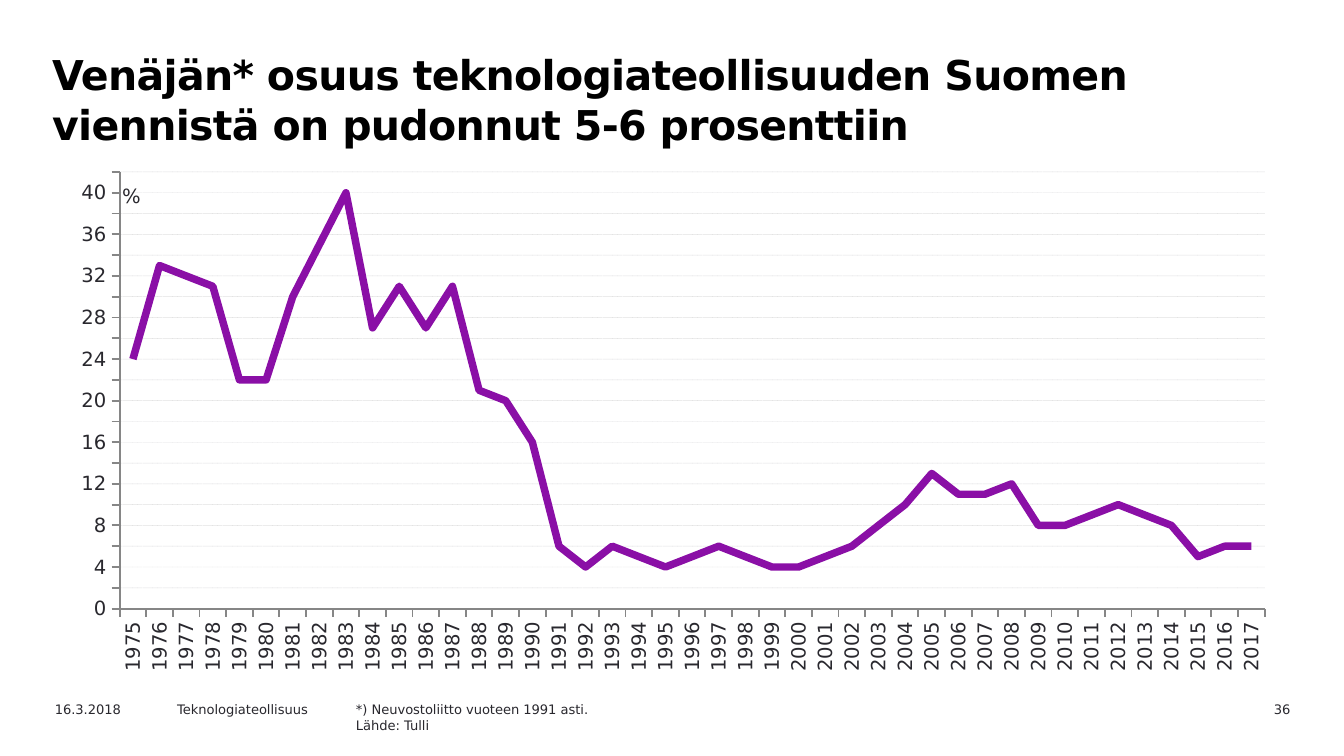
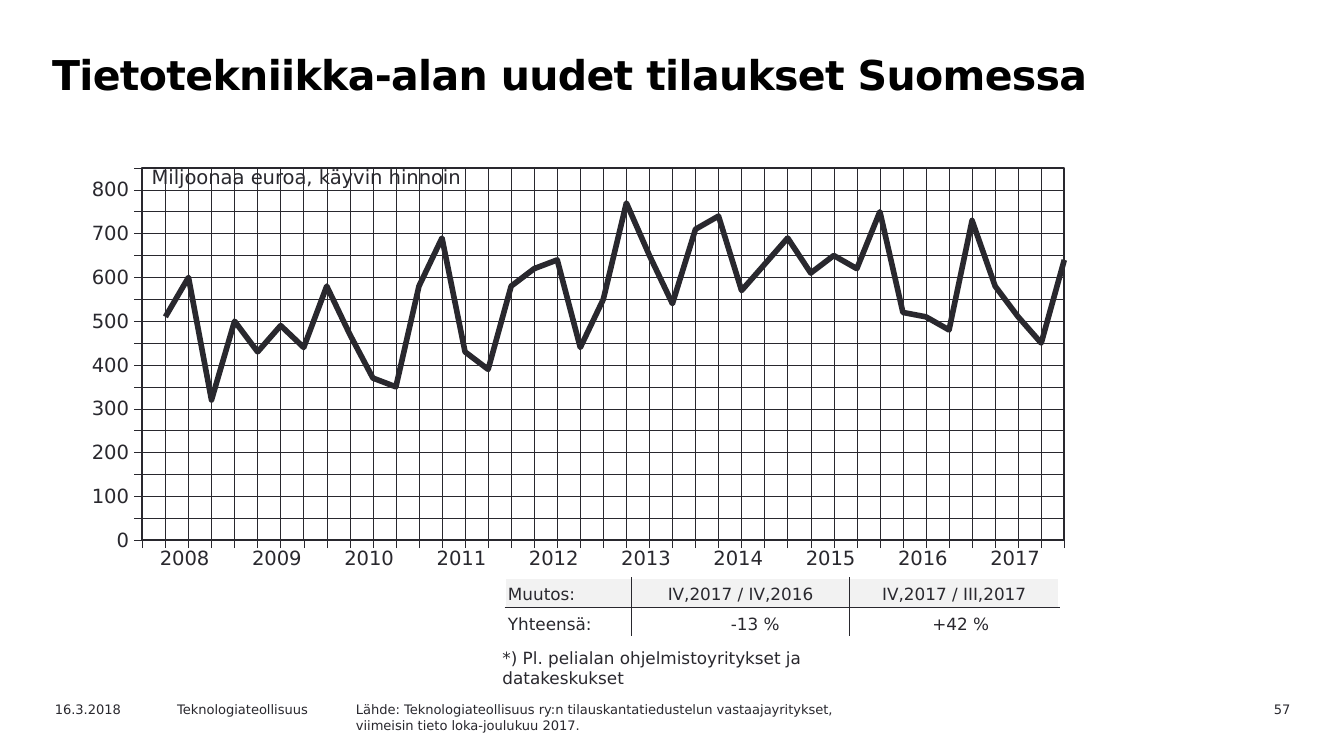
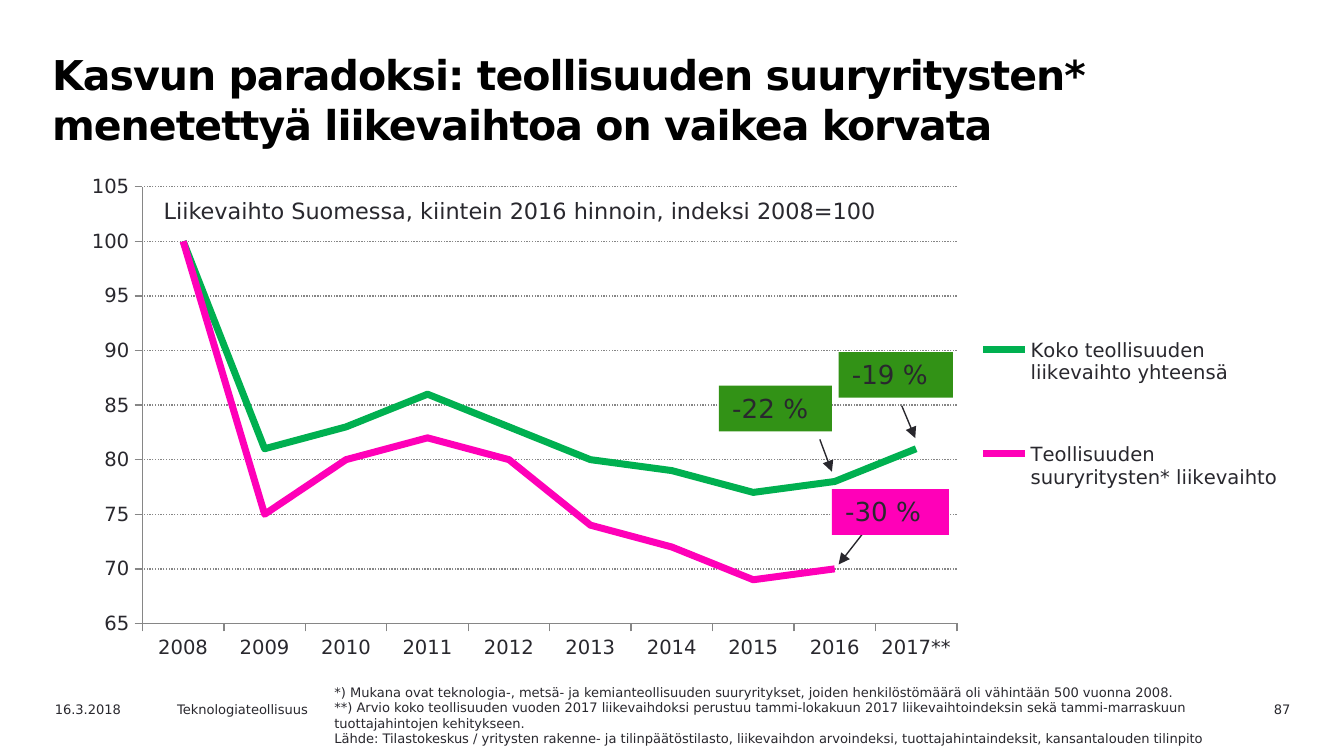
import dataclasses

import lxml.etree
import pptx
import pptx.chart.data
import pptx.dml.color
import pptx.enum.chart
import pptx.enum.dml
import pptx.enum.shapes
import pptx.enum.text
import pptx.oxml.ns
import pptx.util

qn = pptx.oxml.ns.qn
Pt = pptx.util.Pt
ALIGN = pptx.enum.text.PP_ALIGN
EMU_PER_PX = 9144


@dataclasses.dataclass(frozen=True)
class Theme:
    """Colours, font and type sizes of the deck."""
    font: str = "DejaVu Sans"
    ink: str = "29282E"
    black: str = "000000"
    white: str = "FFFFFF"
    axis: str = "868686"
    arrow: str = "28272D"
    header: str = "F2F2F2"
    purple: str = "8A0FA6"
    green: str = "00B050"
    label_green: str = "329216"
    pink: str = "FF00B8"
    title: float = 22
    callout: float = 14
    caption: float = 12
    label: float = 10.5
    note: float = 9
    footer: float = 7


T = Theme()


def px(n):
    """Turn px into EMU."""
    return n * EMU_PER_PX


def rgb(color):
    """Return a colour object for a hex string."""
    return pptx.dml.color.RGBColor.from_string(color)


def put(obj, values):
    """Set every attribute named in a dict of values."""
    for name, value in values.items():
        setattr(obj, name, value)


def style_font(font, size, color=T.ink, bold=False):
    """Give a font the deck's face, a size and a colour."""
    put(font, {"name": T.font, "size": Pt(size), "bold": bold})
    font.color.rgb = rgb(color)


def style_line(line, color, width, dotted=False):
    """Give a line its colour, width and dots."""
    line.color.rgb = rgb(color)
    line.width = Pt(width)
    if dotted:
        line.dash_style = pptx.enum.dml.MSO_LINE.ROUND_DOT


def write(tf, lines, size, color=T.ink, bold=False, align=ALIGN.LEFT):
    """Fill a text frame with one paragraph per line."""
    for i, line in enumerate(lines):
        p = tf.paragraphs[0] if i == 0 else tf.add_paragraph()
        p.alignment = align
        r = p.add_run()
        r.text = line
        style_font(r.font, size, color, bold)


def add_text(s, box, lines, size, wrap=True, **style):
    """Add a text box."""
    tf = s.shapes.add_textbox(*map(px, box)).text_frame
    tf.word_wrap = wrap
    write(tf, lines, size, **style)
    return tf


def add_title(s, text, spacing):
    """Add the slide title with its letter spacing."""
    tf = add_text(s, (28, 31, 874, 71), [text], T.title, color=T.black, bold=True)
    p = tf.paragraphs[0]
    p.line_spacing = Pt(27)
    p._p.get_or_add_pPr().set("marL", str(px(1)))
    p.runs[0]._r.get_or_add_rPr().set("spc", str(spacing))


def add_footer(s, number, source_box, source):
    """Add the date, publisher, source and slide number."""
    add_text(s, (876, 517, 94, 18), [number], T.footer, align=ALIGN.RIGHT)
    add_text(s, (31, 517, 100, 18), ["16.3.2018"], T.footer)
    add_text(s, (122, 517, 142, 18), ["Teknologiateollisuus"], T.footer)
    add_text(s, source_box, source, T.footer)


def add_slide(prs, title, number, source_box, source, spacing=-33):
    """Add a blank slide with title and footer."""
    s = prs.slides.add_slide(prs.slide_layouts[6])
    add_title(s, title, spacing)
    add_footer(s, number, source_box, source)
    return s


def add_layout(parent, before, area, box, inner=False):
    """Place a chart part at a slide box inside the chart area."""
    for old in parent.findall(qn("c:layout")):
        parent.remove(old)
    layout = lxml.etree.Element(qn("c:layout"))
    manual = lxml.etree.SubElement(layout, qn("c:manualLayout"))
    values = {"layoutTarget": "inner"} if inner else {}
    values |= {"xMode": "edge", "yMode": "edge",
               "x": (box[0] - area[0]) / area[2], "y": (box[1] - area[1]) / area[3],
               "w": box[2] / area[2], "h": box[3] / area[3]}
    for name, value in values.items():
        lxml.etree.SubElement(manual, qn(f"c:{name}")).set("val", str(value))
    parent.insert(before, layout)


def style_axis(axis, color, width, grid=None):
    """Style an axis, its labels and its grid lines."""
    mark = pptx.enum.chart.XL_TICK_MARK
    put(axis, {"major_tick_mark": mark.OUTSIDE, "minor_tick_mark": mark.NONE,
               "has_major_gridlines": grid is not None})
    style_line(axis.format.line, color, width)
    style_font(axis.tick_labels.font, T.label)
    if grid:
        style_line(axis.major_gridlines.format.line, *grid, dotted=True)


def add_line_chart(s, box, cats, series, scale, plot, axis, grid, width):
    """Add a line chart from (name, colour, values) rows."""
    data = pptx.chart.data.CategoryChartData()
    data.categories = cats
    for name, _, values in series:
        data.add_series(name, values)
    kind = pptx.enum.chart.XL_CHART_TYPE.LINE
    chart = s.shapes.add_chart(kind, *map(px, box), data).chart
    put(chart, {"has_title": False, "has_legend": False})
    style_font(chart.font, T.label)
    chart.plots[0].vary_by_categories = False
    for line, (_, color, _) in zip(chart.plots[0].series, series):
        line.smooth = False
        style_line(line.format.line, color, width)
    style_axis(chart.category_axis, *axis)
    style_axis(chart.value_axis, *axis, grid=grid)
    put(chart.value_axis, dict(zip(("minimum_scale", "maximum_scale", "major_unit"), scale)))
    add_layout(chart._chartSpace.chart.plotArea, 0, box, plot, inner=True)
    return chart


def add_legend(chart, area, box):
    """Add a legend at the right of a chart."""
    chart.has_legend = True
    put(chart.legend, {"position": pptx.enum.chart.XL_LEGEND_POSITION.RIGHT,
                       "include_in_layout": False})
    style_font(chart.legend.font, T.label)
    add_layout(chart.legend._element, 1, area, box)


def add_border(cell, sides):
    """Draw the four borders of a cell from a dict of colours."""
    tc = cell._tc.get_or_add_tcPr()
    for i, side in enumerate("LRTB"):
        ln = lxml.etree.Element(qn(f"a:ln{side}"), w=str(Pt(1)))
        fill = lxml.etree.SubElement(ln, qn("a:solidFill"))
        lxml.etree.SubElement(fill, qn("a:srgbClr")).set("val", sides[side])
        tc.insert(i, ln)


def add_table(s, box, rows, shares):
    """Add an unstyled table with its width split by shares."""
    table = s.shapes.add_table(len(rows), len(shares), *map(px, box)).table
    put(table, {"first_row": False, "horz_banding": False})
    style = table._tbl.tblPr.find(qn("a:tableStyleId"))
    style.text = "{2D5ABB26-0587-4C30-8999-92F81FD0307C}"
    for col, share in zip(table.columns, shares):
        col.width = px(box[2]) * share // sum(shares)
    return table


def add_years(s, years, box):
    """Add the row of years under a chart."""
    table = add_table(s, box, [years], [1] * len(years))
    for cell, year in zip(table.rows[0].cells, years):
        cell.fill.background()
        write(cell.text_frame, [year], T.label, align=ALIGN.CENTER)


def add_changes(s, box, rows, shares):
    """Add the table of changes with inner rules only."""
    table = add_table(s, box, rows, shares)
    last = len(shares) - 1
    for i, row in enumerate(rows):
        for j, text in enumerate(row):
            cell = table.cell(i, j)
            figure = i > 0 and j > 0
            put(cell, dict.fromkeys(("margin_left", "margin_top", "margin_bottom"), px(2)))
            put(cell, {"margin_right": px(52 if figure else 2),
                       "vertical_anchor": pptx.enum.text.MSO_ANCHOR.BOTTOM})
            align = ALIGN.RIGHT if figure else ALIGN.CENTER if j else ALIGN.LEFT
            write(cell.text_frame, [text], T.note, align=align)
            cell.fill.solid()
            cell.fill.fore_color.rgb = rgb(T.white if i else T.header)
            add_border(cell, {"L": T.ink if j else T.white,
                              "R": T.ink if j < last else T.white,
                              "T": T.ink if i else T.white,
                              "B": T.white if i else T.ink})


def add_callout(s, box, text, color):
    """Add a filled label."""
    sp = s.shapes.add_shape(pptx.enum.shapes.MSO_SHAPE.RECTANGLE, *map(px, box))
    sp.shadow.inherit = False
    sp.fill.solid()
    sp.fill.fore_color.rgb = rgb(color)
    sp.line.fill.background()
    put(sp.text_frame, {"word_wrap": True,
                        "vertical_anchor": pptx.enum.text.MSO_ANCHOR.TOP})
    write(sp.text_frame, [text], T.callout)


def add_arrow(s, *ends):
    """Add a thin arrow between two points."""
    kind = pptx.enum.shapes.MSO_CONNECTOR.STRAIGHT
    arrow = s.shapes.add_connector(kind, *map(px, ends))
    style_line(arrow.line, T.arrow, 0.75)
    lxml.etree.SubElement(arrow.line._get_or_add_ln(), qn("a:tailEnd")).set("type", "triangle")
    lxml.etree.SubElement(arrow._element.spPr, qn("a:effectLst"))


def russia_slide(prs):
    """Build the slide on Russia's share of exports."""
    s = add_slide(prs, "Venäjän* osuus teknologiateollisuuden Suomen viennistä on pudonnut 5-6 prosenttiin",
                  "36", (255, 517, 325, 18),
                  ["*) Neuvostoliitto vuoteen 1991 asti.", "Lähde: Tulli"])
    shares = [24, 33, 32, 31, 22, 22, 30, 35, 40, 27, 31, 27, 31, 21, 20, 16, 6, 4, 6, 5, 4, 5,
              6, 5, 4, 4, 5, 6, 8, 10, 13, 11, 11, 12, 8, 8, 9, 10, 9, 8, 5, 6, 6]
    chart = add_line_chart(s, (42, 121, 918, 387), [str(y) for y in range(1975, 2018)],
                           [("Series 1", T.purple, shares)], (0, 42, 2),
                           (89, 128, 852, 325), (T.axis, 1), (T.ink, 0.25), 4)
    chart.category_axis._element.find(qn("c:txPr")).bodyPr.set("rot", "-5400000")
    grid = chart.value_axis._element.find(qn("c:majorGridlines"))
    for color in grid.iter(qn("a:srgbClr")):
        lxml.etree.SubElement(color, qn("a:alpha")).set("val", "20000")
    add_text(s, (81, 132, 65, 28), ["%"], T.label)


def orders_slide(prs):
    """Build the slide on new orders in information technology."""
    s = add_slide(prs, "Tietotekniikka-alan uudet tilaukset Suomessa", "57", (255, 517, 507, 18),
                  ["Lähde: Teknologiateollisuus ry:n tilauskantatiedustelun vastaajayritykset,",
                   "viimeisin tieto loka-joulukuu 2017."])
    orders = [None, 510, 600, 320, 500, 430, 490, 440, 580, 470, 370, 350, 580, 690, 430, 390,
              580, 620, 640, 440, 550, 770, 650, 540, 710, 740, 570, 630, 690, 610, 650, 620,
              750, 520, 510, 480, 730, 580, 510, 450, 640]
    grid = (T.ink, 0.25)
    chart = add_line_chart(s, (31, 111, 918, 333), [str(i + 1) for i in range(len(orders))],
                           [("Series 1", T.ink, orders)], (0, 850, 50),
                           (106, 125, 686, 277), (T.ink, 0.22), grid, 3)
    style_axis(chart.category_axis, T.ink, 0.22, grid)
    chart.category_axis.tick_label_position = pptx.enum.chart.XL_TICK_LABEL_POSITION.NONE
    put(chart.value_axis.tick_labels, {"number_format": "#,##0", "number_format_is_linked": False})
    axis = chart.value_axis._element
    cross = axis.find(qn("c:crossBetween"))
    if cross is None:
        cross = lxml.etree.Element(qn("c:crossBetween"))
        axis.find(qn("c:crosses")).addnext(cross)
    cross.set("val", "midCat")
    frame = lxml.etree.SubElement(chart._chartSpace.chart.plotArea, qn("c:spPr"))
    ln = lxml.etree.SubElement(frame, qn("a:ln"), w=str(Pt(1)))
    fill = lxml.etree.SubElement(ln, qn("a:solidFill"))
    lxml.etree.SubElement(fill, qn("a:srgbClr")).set("val", T.ink)
    add_years(s, [str(y) for y in range(2008, 2018)], (103, 402, 687, 31))
    add_text(s, (103, 118, 260, 27), ["Miljoonaa euroa, käyvin hinnoin"], T.label, wrap=False)
    add_changes(s, (376, 430, 412, 44),
                [["Muutos:", "IV,2017 / IV,2016", "IV,2017 / III,2017"],
                 ["Yhteensä:", "-13 %", "+42 %"]], [94, 162, 156])
    add_text(s, (364, 477, 299, 40), ["*) Pl. pelialan ohjelmistoyritykset ja datakeskukset"], T.note)


def paradox_slide(prs):
    """Build the slide on the lost turnover of large companies."""
    s = add_slide(prs, "Kasvun paradoksi: teollisuuden suuryritysten* menetettyä liikevaihtoa on vaikea korvata",
                  "87", (239, 504, 686, 13),
                  ["*) Mukana ovat teknologia-, metsä- ja kemianteollisuuden suuryritykset, "
                   "joiden henkilöstömäärä oli vähintään 500 vuonna 2008.",
                   "**) Arvio koko teollisuuden vuoden 2017 liikevaihdoksi perustuu tammi-lokakuun 2017 "
                   "liikevaihtoindeksin sekä tammi-marraskuun tuottajahintojen kehitykseen.",
                   "Lähde: Tilastokeskus / yritysten rakenne- ja tilinpäätöstilasto, liikevaihdon "
                   "arvoindeksi, tuottajahintaindeksit, kansantalouden tilinpito"], -50)
    series = [("Koko teollisuuden liikevaihto yhteensä", T.green,
               [100, 81, 83, 86, 83, 80, 79, 77, 78, 81]),
              ("Teollisuuden suuryritysten* liikevaihto", T.pink,
               [100, 75, 80, 82, 80, 74, 72, 69, 70, None])]
    area = (42, 124, 918, 384)
    chart = add_line_chart(s, area, [str(y) for y in range(2008, 2017)] + ["2017**"],
                           series, (65, 105, 5), (106, 139, 606, 325),
                           (T.axis, 0.75), (T.axis, 0.75), 3.75)
    add_legend(chart, area, (738, 208, 222, 200))
    add_text(s, (112, 142, 570, 30), ["Liikevaihto Suomessa, kiintein 2016 hinnoin, indeksi 2008=100"],
             T.caption, wrap=False)
    for ends in [(671, 302, 681, 326), (642, 397, 624, 420), (610, 327, 619, 351)]:
        add_arrow(s, *ends)
    for box, text, color in [((535, 287, 84, 34), "-22 %", T.label_green),
                             ((619, 364, 87, 34), "-30 %", T.pink),
                             ((624, 262, 85, 34), "-19 %", T.label_green)]:
        add_callout(s, box, text, color)


def main():
    """Build and save the deck."""
    prs = pptx.Presentation()
    put(prs, {"slide_width": px(1000), "slide_height": px(1000) * 9 // 16})
    for build in (russia_slide, orders_slide, paradox_slide):
        build(prs)
    prs.save("out.pptx")


if __name__ == "__main__":
    main()
